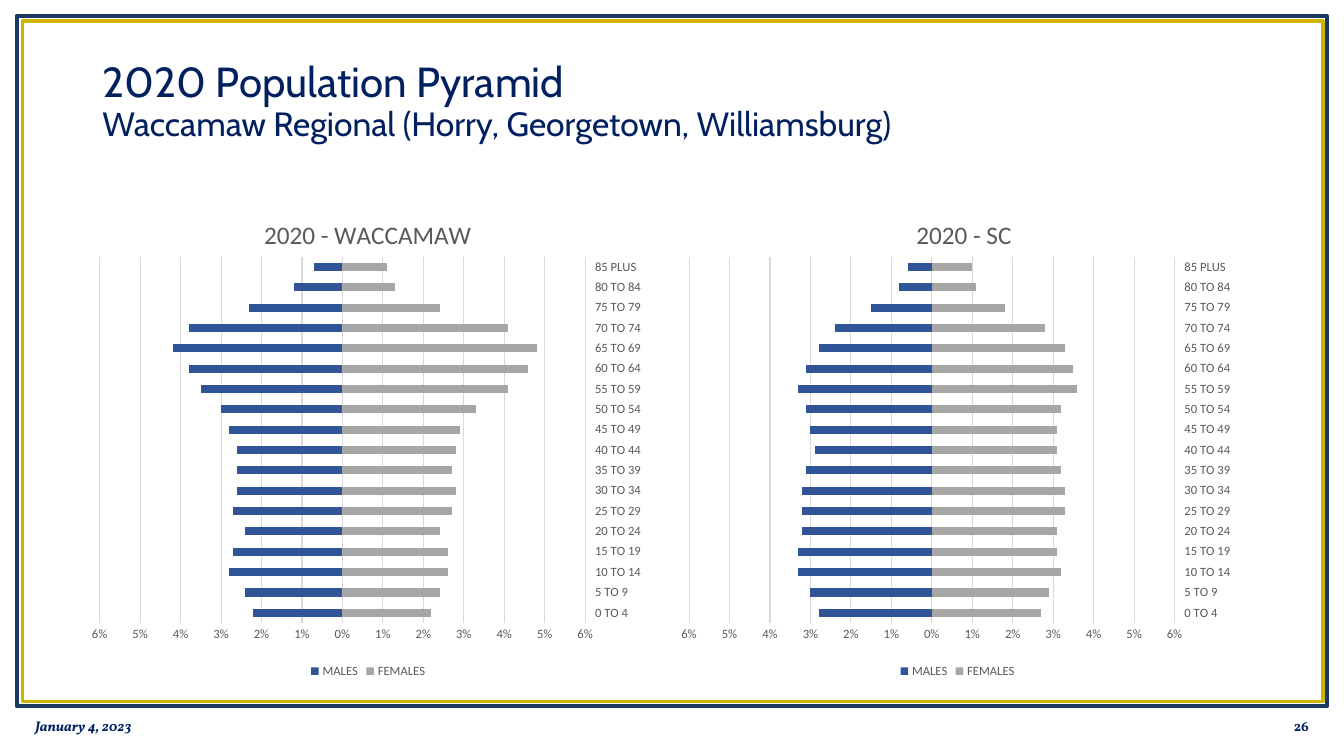
"""Builds the 2020 population pyramid slide for the Waccamaw region and the state."""
from dataclasses import dataclass

from lxml.etree import SubElement
from pptx import Presentation
from pptx.chart.data import CategoryChartData
from pptx.dml.color import RGBColor
from pptx.enum.chart import XL_CHART_TYPE, XL_LEGEND_POSITION, XL_TICK_LABEL_POSITION, XL_TICK_MARK
from pptx.enum.shapes import MSO_SHAPE
from pptx.enum.text import MSO_ANCHOR, MSO_AUTO_SIZE, PP_ALIGN
from pptx.oxml.ns import qn
from pptx.util import Pt


@dataclass(frozen=True)
class Theme:
    navy: str = "002060"
    frame: str = "1C3961"
    gold: str = "CCB400"
    males: str = "2F5597"
    females: str = "A6A6A6"
    grid: str = "D9D9D9"
    label: str = "595959"
    title_font: str = "Cabin"
    footer_font: str = "Vollkorn"
    chart_font: str = "Calibri"
    title_size: float = 30
    subtitle_size: float = 24
    chart_title_size: float = 18
    label_size: float = 9
    footer_size: float = 10


AGES = [f"{age} TO {age + 4}" for age in range(0, 85, 5)] + ["85 PLUS"]

WACCAMAW = {
    "MALES": [-0.022, -0.024, -0.028, -0.027, -0.024, -0.027, -0.026, -0.026, -0.026,
              -0.028, -0.03, -0.035, -0.038, -0.042, -0.038, -0.023, -0.012, -0.007],
    "FEMALES": [0.022, 0.024, 0.026, 0.026, 0.024, 0.027, 0.028, 0.027, 0.028,
                0.029, 0.033, 0.041, 0.046, 0.048, 0.041, 0.024, 0.013, 0.011],
}
STATE = {
    "MALES": [-0.028, -0.03, -0.033, -0.033, -0.032, -0.032, -0.032, -0.031, -0.029,
              -0.03, -0.031, -0.033, -0.031, -0.028, -0.024, -0.015, -0.008, -0.006],
    "FEMALES": [0.027, 0.029, 0.032, 0.031, 0.031, 0.033, 0.033, 0.032, 0.031,
                0.031, 0.032, 0.036, 0.035, 0.033, 0.028, 0.018, 0.011, 0.01],
}


def set_layout(parent, index, **values):
    for old in parent.findall(qn("c:layout")):
        parent.remove(old)
    layout = SubElement(parent, qn("c:layout"))
    parent.insert(index, layout)
    manual = SubElement(layout, qn("c:manualLayout"))
    for tag, value in values.items():
        SubElement(manual, qn(f"c:{tag}")).set("val", str(value))


class SlideBuilder:
    def __init__(self, slide, theme):
        self.slide = slide
        self.theme = theme

    def style(self, font, name, size, color, bold=False, italic=False):
        font.name = name
        font.size = Pt(size)
        font.color.rgb = RGBColor.from_string(color)
        font.bold = bold
        font.italic = italic

    def frame(self, x, y, w, h, color, weight):
        sp = self.slide.shapes.add_shape(MSO_SHAPE.RECTANGLE, Pt(x), Pt(y), Pt(w), Pt(h))
        sp.shadow.inherit = False
        sp.fill.background()
        sp.line.color.rgb = RGBColor.from_string(color)
        sp.line.width = Pt(weight)

    def title(self, x, y, w, h, heading, subheading):
        t = self.theme
        sp = self.slide.shapes.title
        sp.left, sp.top, sp.width, sp.height = Pt(x), Pt(y), Pt(w), Pt(h)
        tf = sp.text_frame
        tf.text = f"{heading}\v{subheading}"
        tf.auto_size = MSO_AUTO_SIZE.NONE
        tf.vertical_anchor = MSO_ANCHOR.MIDDLE
        p = tf.paragraphs[0]
        p.alignment = PP_ALIGN.LEFT
        p.line_spacing = 0.9
        for r, size in zip(p.runs, (t.title_size, t.subtitle_size)):
            self.style(r.font, t.title_font, size, t.navy)

    def footer(self, x, y, w, h, text, align, italic=False):
        t = self.theme
        tf = self.slide.shapes.add_textbox(Pt(x), Pt(y), Pt(w), Pt(h)).text_frame
        tf.word_wrap = True
        tf.vertical_anchor = MSO_ANCHOR.MIDDLE
        tf.text = text
        p = tf.paragraphs[0]
        p.alignment = align
        self.style(p.runs[0].font, t.footer_font, t.footer_size, t.navy, True, italic)

    def pyramid(self, x, y, w, h, title, title_x, shares):
        t = self.theme
        data = CategoryChartData(number_format="0.0%")
        data.categories = AGES
        for name, values in shares.items():
            data.add_series(name, values)
        chart = self.slide.shapes.add_chart(
            XL_CHART_TYPE.BAR_STACKED, Pt(x), Pt(y), Pt(w), Pt(h), data).chart
        self.style(chart.font, t.chart_font, t.label_size, t.label)

        chart.has_title = True
        tf = chart.chart_title.text_frame
        tf.text = title
        self.style(tf.paragraphs[0].runs[0].font, t.chart_font, t.chart_title_size, t.label)
        set_layout(chart.chart_title._element, 1, xMode="edge", yMode="edge", x=title_x, y=0.05)

        chart.has_legend = True
        chart.legend.position = XL_LEGEND_POSITION.BOTTOM
        chart.legend.include_in_layout = False
        self.style(chart.legend.font, t.chart_font, t.label_size, t.label)

        plot = chart.plots[0]
        plot.gap_width = 150
        plot.overlap = 100
        plot.vary_by_categories = False
        for series, color in zip(plot.series, (t.males, t.females)):
            series.invert_if_negative = False
            series.format.fill.solid()
            series.format.fill.fore_color.rgb = RGBColor.from_string(color)

        ages, percent = chart.category_axis, chart.value_axis
        for axis in (ages, percent):
            axis.major_tick_mark = axis.minor_tick_mark = XL_TICK_MARK.NONE
            self.style(axis.tick_labels.font, t.chart_font, t.label_size, t.label)
        ages.tick_label_position = XL_TICK_LABEL_POSITION.HIGH
        percent.minimum_scale, percent.maximum_scale = -0.06, 0.06
        percent.major_unit = 0.01
        percent.tick_labels.number_format = "0%;0%"
        percent.tick_labels.number_format_is_linked = False
        percent.format.line.fill.background()
        percent.has_major_gridlines = True
        for line in (ages.format.line, percent.major_gridlines.format.line):
            line.color.rgb = RGBColor.from_string(t.grid)
            line.width = Pt(0.75)
        set_layout(chart._chartSpace.chart.plotArea, 0, layoutTarget="inner",
                   xMode="edge", yMode="edge", x=0.03, y=0.14, w=0.85, h=0.74)


def main():
    prs = Presentation()
    prs.slide_width, prs.slide_height = Pt(960), Pt(540)
    theme = Theme()
    s = SlideBuilder(prs.slides.add_slide(prs.slide_layouts[5]), theme)
    s.frame(12, 11.5, 936, 493, theme.frame, 3)
    s.frame(16, 15, 929, 486, theme.gold, 2.5)
    s.title(66, 29, 828, 88.5, "2020 Population Pyramid",
            "Waccamaw Regional (Horry, Georgetown, Williamsburg)")
    s.footer(18, 504, 216, 29, "January 4, 2023", PP_ALIGN.LEFT, italic=True)
    s.footer(726, 504, 216, 29, "26", PP_ALIGN.RIGHT)
    pyramids = [("2020 - WACCAMAW", 0.31, WACCAMAW), ("2020 - SC", 0.42, STATE)]
    for i, (title, title_x, shares) in enumerate(pyramids):
        s.pyramid(59 + i * 421, 134, 408, 353.5, title, title_x, shares)
    prs.save("out.pptx")


if __name__ == "__main__":
    main()
